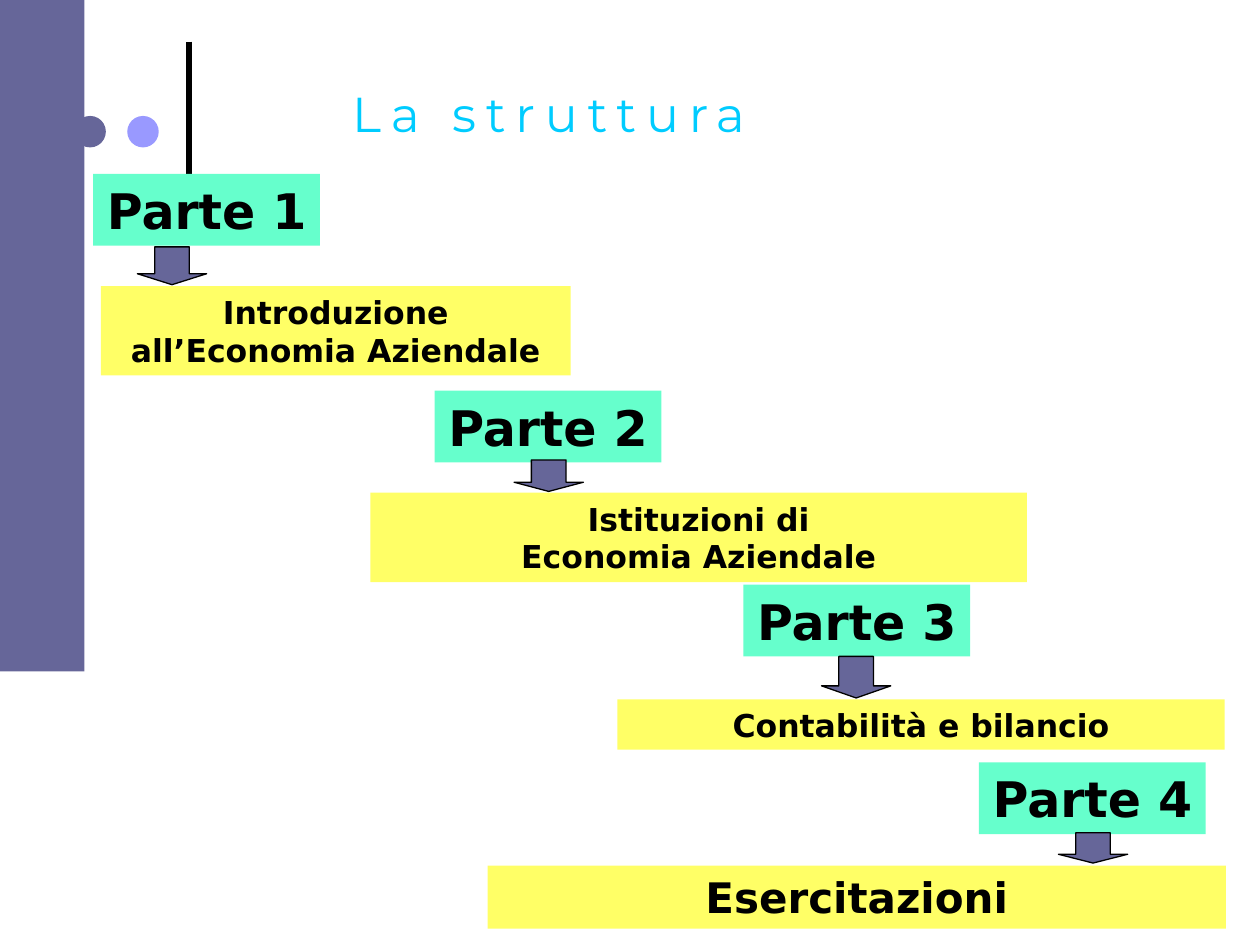
import pptx
import pptx.dml.color
import pptx.enum.shapes
import pptx.enum.text
import pptx.oxml
import pptx.util

RGBColor = pptx.dml.color.RGBColor
Shapes = pptx.enum.shapes.MSO_SHAPE
BLACK = RGBColor(0x00, 0x00, 0x00)
SLATE = RGBColor(0x66, 0x66, 0x99)
LILAC = RGBColor(0x99, 0x99, 0xFF)
YELLOW = RGBColor(0xFF, 0xFF, 0x66)
MINT = RGBColor(0x66, 0xFF, 0xCC)
CYAN = RGBColor(0x00, 0xCC, 0xFF)

COLUMNS, ROWS = 100, 75
LABEL_SIZE = (18, 5.7)
ARROW_WIDTH = 5.5

# label, its column and row; arrow column, row and height;
# description lines, their font size and box on the grid
PARTS = [
    ("Parte 1", (7.4, 13.8), (10.9, 19.6, 3),
     ["Introduzione all’Economia Aziendale"], 18, (8, 22.7, 37.3, 7.1)),
    ("Parte 2", (34.5, 31), (40.8, 36.5, 2.5),
     ["Istituzioni di", "Economia Aziendale"], 18, (29.4, 39.1, 52.1, 7.1)),
    ("Parte 3", (59, 46.4), (65.2, 52.1, 3.3),
     ["Contabilità e bilancio"], 18, (49, 55.5, 48.2, 4)),
    ("Parte 4", (77.7, 60.5), (84, 66.1, 2.4),
     ["Esercitazioni"], 24, (38.7, 68.7, 58.6, 5)),
]


class SlideBuilder:
    """Draws elements on one slide, placed on a grid of columns and rows."""

    def __init__(self, deck):
        self.column = deck.slide_width / COLUMNS
        self.row = deck.slide_height / ROWS
        self.page = deck.slides.add_slide(deck.slide_layouts[5])

    def place(self, left, top, width, height):
        return [int(left * self.column), int(top * self.row),
                int(width * self.column), int(height * self.row)]

    def fill_text(self, box, lines, wrap, color, **font_format):
        frame = box.text_frame
        frame.text = "\n".join(lines)
        frame.word_wrap = wrap
        frame.vertical_anchor = pptx.enum.text.MSO_ANCHOR.MIDDLE
        for para in frame.paragraphs:
            para.alignment = pptx.enum.text.PP_ALIGN.CENTER
            for span in para.runs:
                span.font.color.rgb = color
                for name, value in font_format.items():
                    setattr(span.font, name, value)

    def title(self, text, *area):
        box = self.page.shapes.title
        for name, value in zip(("left", "top", "width", "height"), self.place(*area)):
            setattr(box, name, value)
        self.fill_text(box, [text], False, CYAN, name="Montserrat", bold=False,
                       size=pptx.util.Pt(28))
        span = box.text_frame.paragraphs[0].runs[0]
        span._r.get_or_add_rPr().set("spc", "560")

    def shape(self, kind, fill, *area):
        shape = self.page.shapes.add_shape(kind, *self.place(*area))
        shape.shadow.inherit = False
        shape.fill.solid()
        shape.fill.fore_color.rgb = fill
        shape.line.fill.background()
        return shape

    def text_box(self, fill, lines, size, area, wrap=True):
        box = self.shape(Shapes.RECTANGLE, fill, *area)
        self.fill_text(box, lines, wrap, BLACK, name="DejaVu Sans", bold=True,
                       size=pptx.util.Pt(size))

    def down_arrow(self, left, top, height):
        arrow = self.shape(Shapes.DOWN_ARROW, SLATE, left, top, ARROW_WIDTH, height)
        arrow.adjustments[1] = 0.29
        arrow.line.color.rgb = BLACK
        arrow.line.width = pptx.util.Pt(0.75)

    def vertical_line(self, column, top, bottom):
        x, y, _, height = self.place(column, top, 0, bottom - top)
        line = self.page.shapes.add_connector(
            pptx.enum.shapes.MSO_CONNECTOR.STRAIGHT, x, y, x, y + height)
        line.line.color.rgb = BLACK
        line.line.width = pptx.util.Pt(3)
        line._element.spPr.append(pptx.oxml.parse_xml(
            '<a:effectLst xmlns:a="http://schemas.openxmlformats.org/drawingml/2006/main"/>'))


def main():
    deck = pptx.Presentation()
    deck.slide_width = pptx.util.Inches(10)
    deck.slide_height = pptx.util.Inches(7.5)
    builder = SlideBuilder(deck)

    builder.vertical_line(15, 3.3, 17.5)
    for left, color in ((5.9, SLATE), (10.1, LILAC)):
        builder.shape(Shapes.OVAL, color, left, 9.2, 2.5, 2.5)
    builder.shape(Shapes.RECTANGLE, SLATE, 0, 0, 6.7, 53.3)
    builder.title("La struttura", 20.9, 5.9, 45.3, 6.1)

    for label, corner, arrow, lines, size, area in PARTS:
        builder.text_box(YELLOW, lines, size, area)
        builder.text_box(MINT, [label], 28, corner + LABEL_SIZE, wrap=False)
        builder.down_arrow(*arrow)

    deck.save("out.pptx")


if __name__ == "__main__":
    main()
